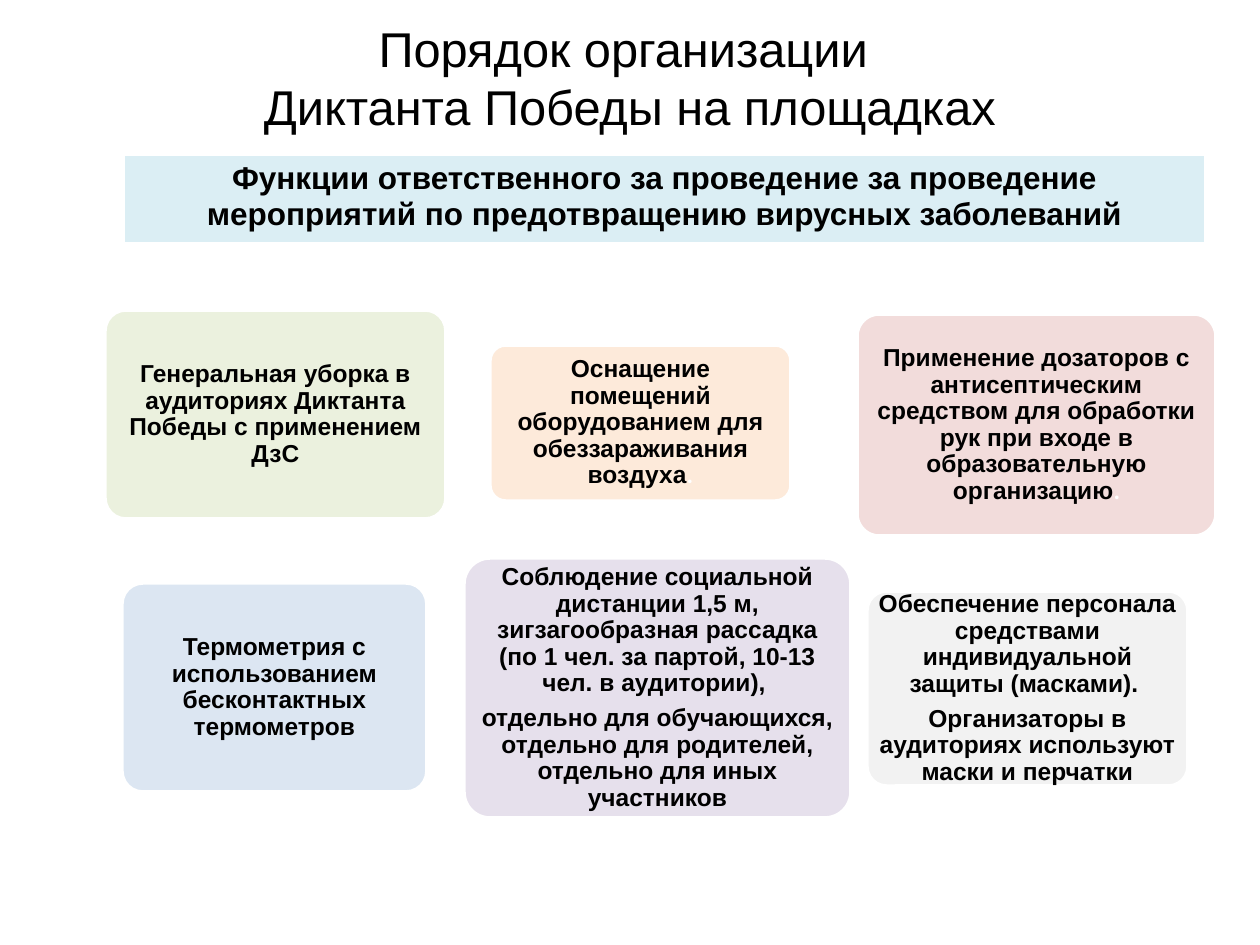
from pptx import Presentation
from pptx.dml.color import RGBColor
from pptx.enum.shapes import MSO_SHAPE
from pptx.enum.text import MSO_ANCHOR, PP_ALIGN
from pptx.util import Emu, Pt

PX = 914400 // 126
COLORS = {
    "black": "000000", "white": "FFFFFF", "aqua": "DBEEF4",
    "green": "EBF1DE", "blue": "DCE6F2", "orange": "FDEADA",
    "purple": "E6E0EC", "red": "F2DCDB", "gray": "F2F2F2",
}


def px(*values):
    return [Emu(v * PX) for v in values]


def style(r, size, bold, color="black", font="Arial"):
    r.font.name = font
    r.font.size = Pt(size)
    r.font.bold = bold
    r.font.color.rgb = RGBColor.from_string(COLORS[color])


prs = Presentation()
prs.slide_width, prs.slide_height = px(1260, 945)
s = prs.slides.add_slide(prs.slide_layouts[5])

title = s.shapes.title
title.left, title.top, title.width, title.height = px(63, 19, 1134, 117)
tf = title.text_frame
tf.margin_top = tf.margin_bottom = 0
tf.vertical_anchor = MSO_ANCHOR.MIDDLE
tf.text = "Порядок организации \vДиктанта Победы на площадках"
p = tf.paragraphs[0]
p.alignment = PP_ALIGN.CENTER
p.line_spacing = Pt(33)
for r in p.runs:
    style(r, 27.9, False)

table = s.shapes.add_table(1, 1, *px(124, 155, 1081, 88)).table
cell = table.cell(0, 0)
cell.fill.solid()
cell.fill.fore_color.rgb = RGBColor.from_string(COLORS["aqua"])
cell.text = ("Функции ответственного за проведение за проведение "
             "мероприятий по предотвращению вирусных заболеваний")
p = cell.text_frame.paragraphs[0]
p.alignment = PP_ALIGN.CENTER
style(p.runs[0], 18, True)

cards = [
    ((105, 310, 341, 209), "green", False,
     ["Генеральная уборка в аудиториях Диктанта Победы с применением ДзС"]),
    ((122, 583, 305, 209), "blue", False,
     ["Термометрия с использованием бесконтактных термометров"]),
    ((490, 345, 301, 156), "orange", True,
     ["Оснащение помещений оборудованием для обеззараживания воздуха"]),
    ((464, 558, 387, 260), "purple", False,
     ["Соблюдение социальной дистанции 1,5 м, зигзагообразная рассадка "
      "(по 1 чел. за партой, 10-13 чел. в аудитории), ",
      "отдельно для обучающихся, отдельно для родителей, "
      "отдельно для иных участников"]),
    ((857, 314, 359, 222), "red", True,
     ["Применение дозаторов с антисептическим средством для обработки рук "
      "при входе в образовательную организацию"]),
    ((867, 591, 321, 195), "gray", False,
     ["Обеспечение персонала средствами индивидуальной защиты (масками). ",
      "Организаторы в аудиториях используют маски и перчатки"]),
]

for box, color, white_dot, texts in cards:
    sp = s.shapes.add_shape(MSO_SHAPE.ROUNDED_RECTANGLE, *px(*box))
    sp.adjustments[0] = 0.1
    sp.shadow.inherit = False
    sp.fill.solid()
    sp.fill.fore_color.rgb = RGBColor.from_string(COLORS[color])
    sp.line.color.rgb = RGBColor.from_string(COLORS["white"])
    sp.line.width = Pt(2)
    tf = sp.text_frame
    tf.word_wrap = True
    tf.vertical_anchor = MSO_ANCHOR.MIDDLE
    tf.margin_left, tf.margin_top, tf.margin_right, tf.margin_bottom = px(5, 4, 5, 4)
    tf.text = "\n".join(texts)
    for p in tf.paragraphs:
        p.alignment = PP_ALIGN.CENTER
        p.line_spacing = 0.9
        p.space_after = Pt(4.9)
        style(p.runs[0], 14, True)
    if white_dot:
        r = p.add_run()
        r.text = "."
        style(r, 14, True, "white", "Calibri")

prs.save("out.pptx")
